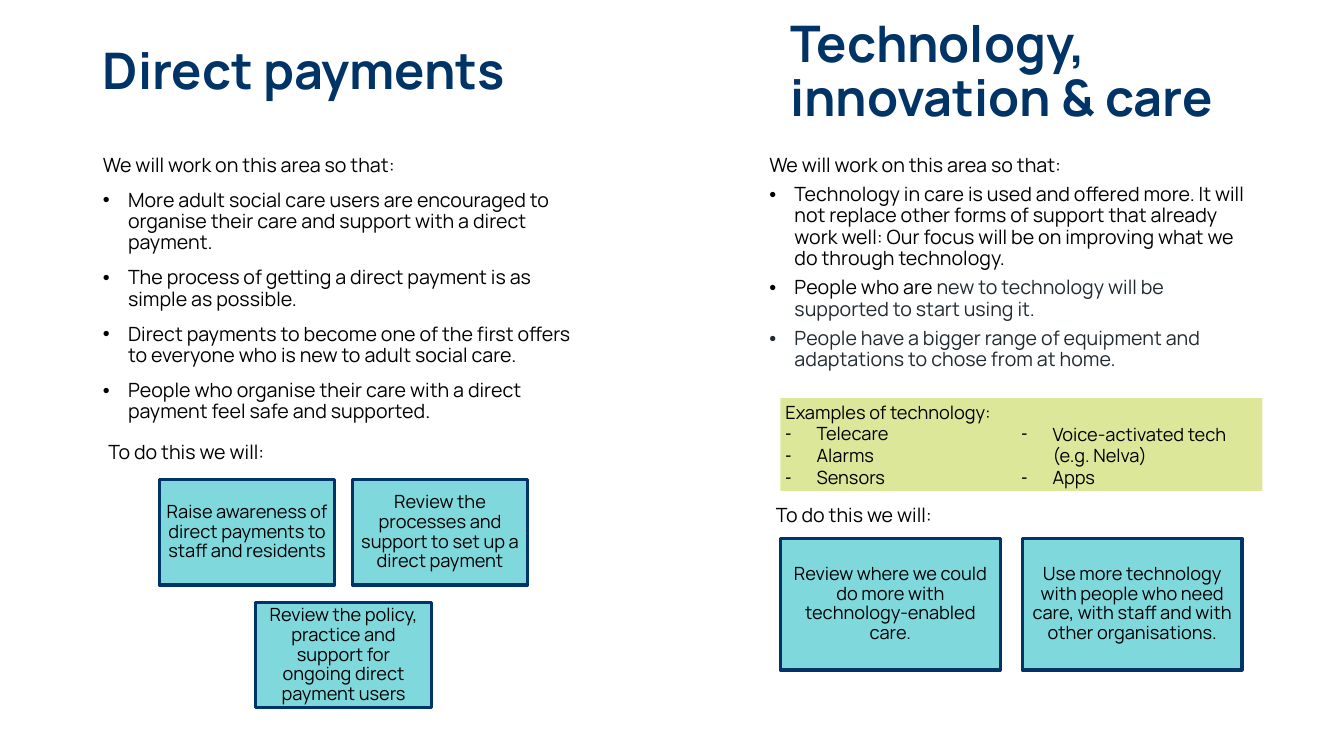
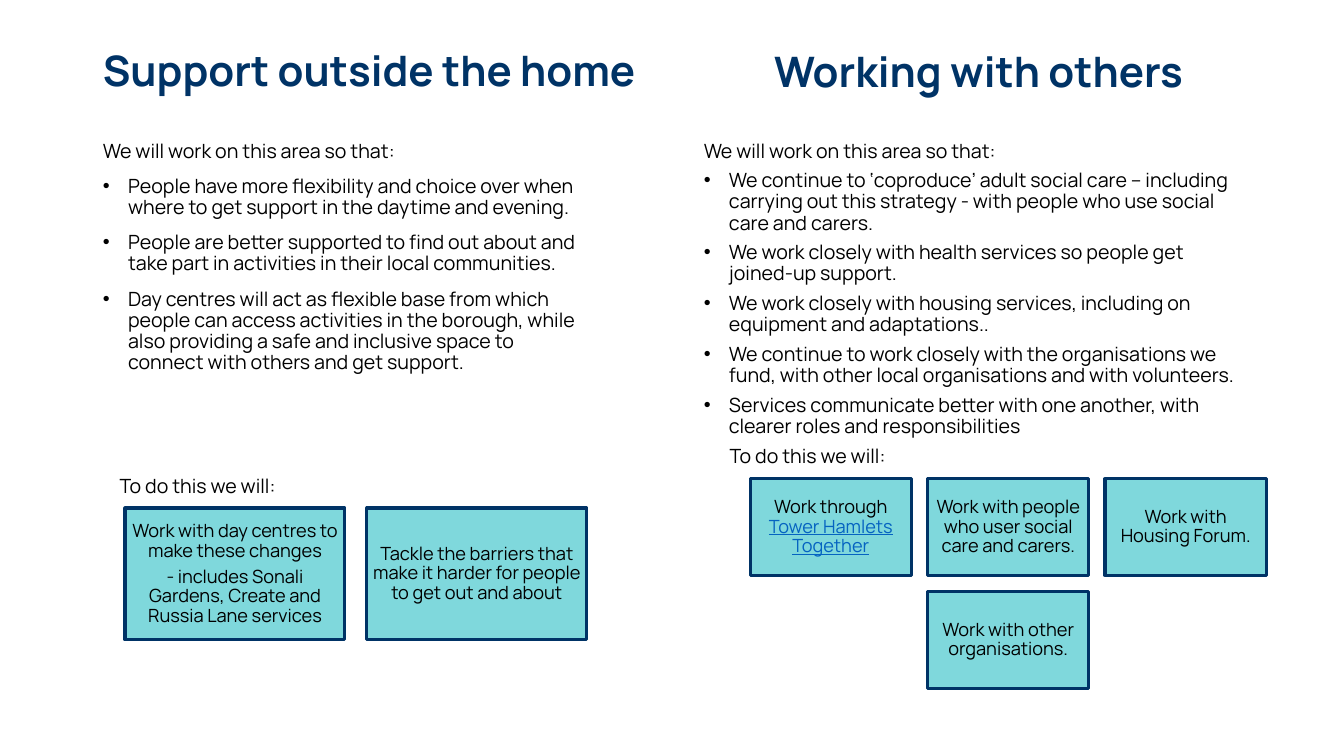
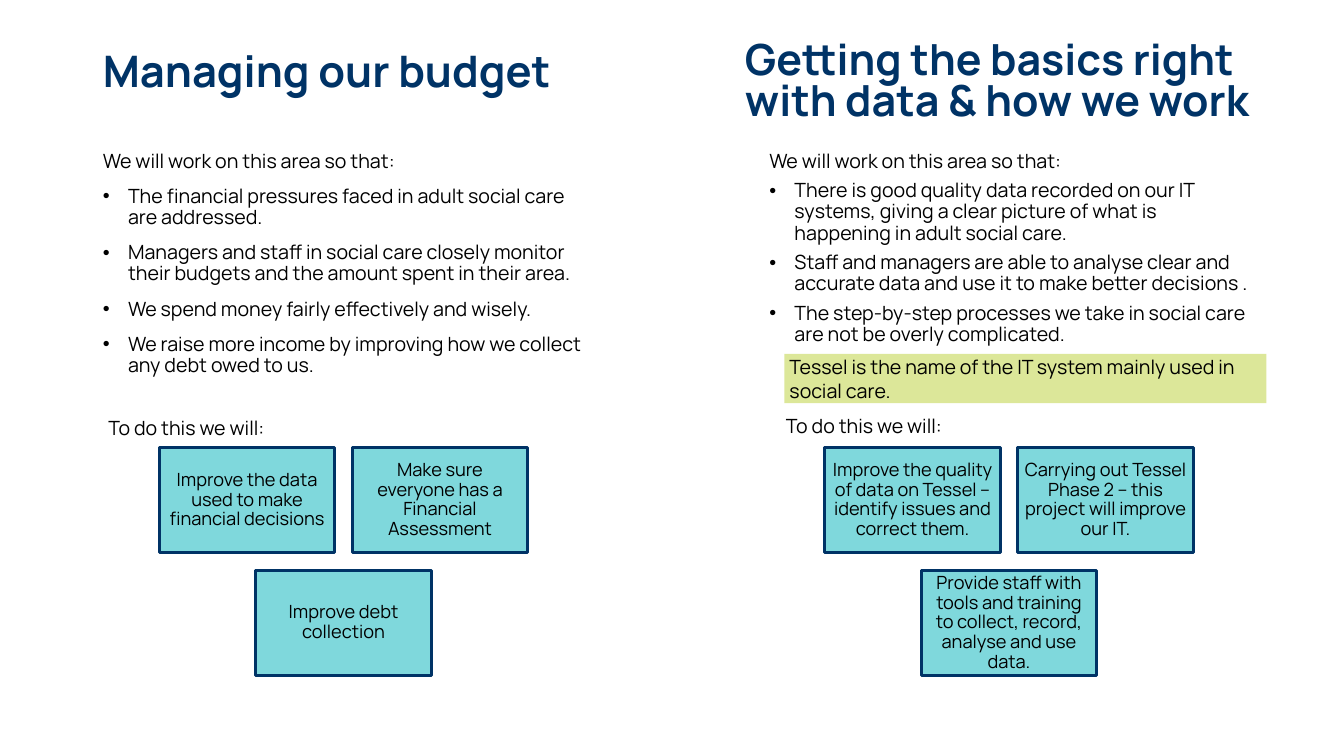
import pptx
import pptx.util
import pptx.dml.color
import pptx.enum.shapes
import pptx.enum.text
from dataclasses import dataclass
from lxml import etree
from pptx.util import Inches, Pt

ALIGN = pptx.enum.text.PP_ALIGN
ANCHOR = pptx.enum.text.MSO_ANCHOR
RECTANGLE = pptx.enum.shapes.MSO_SHAPE.RECTANGLE
DRAWING_NS = "http://schemas.openxmlformats.org/drawingml/2006/main"


@dataclass(frozen=True)
class Theme:
    font: str = "Manrope"
    navy: str = "003366"
    teal: str = "00B2BB"
    lime: str = "BBD034"
    black: str = "000000"
    slate: str = "202A30"
    link: str = "0563C1"
    body_size: float = 14
    box_size: float = 13
    border: float = 2.25
    inset: float = 0.05
    tight: float = 0.9


THEME = Theme()
INTRO = "We will work on this area so that:"
TO_DO = "To do this we will:"


def add_child(parent, tag, **attributes):
    return etree.SubElement(parent, f"{{{DRAWING_NS}}}{tag}", attributes)


def rgb(value):
    return pptx.dml.color.RGBColor.from_string(value)


class Deck:
    """Holds the theme and the slide being filled."""

    def __init__(self, theme):
        self.theme = theme
        self.show = pptx.Presentation()
        self.show.slide_width, self.show.slide_height = Inches(13.33), Inches(7.5)
        self.slide = None

    def new_slide(self):
        self.slide = self.show.slides.add_slide(self.show.slide_layouts[3])

    # Text
    def frame(self, shape, anchor=ANCHOR.TOP, inset=None):
        settings = {"word_wrap": True, "vertical_anchor": anchor,
                    "auto_size": pptx.enum.text.MSO_AUTO_SIZE.NONE}
        if inset is not None:
            for side in ("left", "right", "top", "bottom"):
                settings[f"margin_{side}"] = Inches(inset)
        for name, value in settings.items():
            setattr(shape.text_frame, name, value)
        return shape.text_frame

    def add_text(self, frame, paragraphs, size, gap=0, bullet=None, indent=0.25,
                 plain_first=False, bold=False, color=None, **layout):
        """A paragraph is a string or a list of (text, color, underline) runs."""
        for index, content in enumerate(paragraphs):
            paragraph = frame.add_paragraph() if index else frame.paragraphs[0]
            self.mark(paragraph, None if plain_first and not index else bullet, indent)
            spacing = {"space_before": Pt(gap if index else 0), "space_after": Pt(0)}
            for name, value in {**spacing, **layout}.items():
                setattr(paragraph, name, value)
            if isinstance(content, str):
                content = [(content, color or self.theme.black, None)]
            for text, run_color, underline in content:
                run = paragraph.add_run()
                run.text = text
                look = {"name": self.theme.font, "size": Pt(size),
                        "bold": bold, "underline": underline}
                for name, value in look.items():
                    setattr(run.font, name, value)
                run.font.color.rgb = rgb(run_color)

    def mark(self, paragraph, bullet, indent):
        properties = paragraph._p.get_or_add_pPr()
        margin = Inches(indent) if bullet else 0
        properties.set("marL", str(margin))
        properties.set("indent", str(-margin))
        if bullet:
            add_child(properties, "buFont", typeface="Arial")
            add_child(properties, "buChar", char=bullet)
        else:
            add_child(properties, "buNone")

    def place(self, shape, left, top, width, height):
        for name, value in zip(("left", "top", "width", "height"),
                               (left, top, width, height)):
            setattr(shape, name, Inches(value))
        return shape

    def text_box(self, *area):
        return self.slide.shapes.add_textbox(*map(Inches, area))

    # Headings and lists
    def heading(self, text, area, size, main=False, line_spacing=None):
        if main:
            shape = self.place(self.slide.shapes.title, *area)
        else:
            shape = self.text_box(*area)
        self.add_text(self.frame(shape, ANCHOR.MIDDLE), [text], size, bold=True,
                      color=self.theme.navy, alignment=ALIGN.LEFT,
                      line_spacing=line_spacing or self.theme.tight)

    def aims(self, slot, area, gap, items):
        shape = self.place(self.slide.placeholders[slot], *area)
        self.add_text(self.frame(shape), [INTRO, *items], self.theme.body_size,
                      gap=gap, bullet="•", plain_first=True, alignment=ALIGN.LEFT,
                      line_spacing=self.theme.tight)

    def to_do(self, left, top):
        shape = self.text_box(left, top, 2.08, 0.34)
        self.add_text(self.frame(shape), [TO_DO], self.theme.body_size,
                      alignment=ALIGN.CENTER)

    # Boxes
    def box(self, fill, *area):
        shape = self.slide.shapes.add_shape(RECTANGLE, *map(Inches, area))
        shape.shadow.inherit = False
        shape.fill.solid()
        shape.fill.fore_color.rgb = rgb(fill)
        add_child(shape._element.spPr.find(f".//{{{DRAWING_NS}}}srgbClr"),
                  "alpha", val="50000")
        shape.line.fill.background()
        return shape

    def note(self, area, paragraphs, size, **layout):
        frame = self.frame(self.box(self.theme.lime, *area), ANCHOR.MIDDLE,
                           self.theme.inset)
        self.add_text(frame, paragraphs, size, alignment=ALIGN.LEFT, **layout)

    def note_column(self, area, items):
        frame = self.frame(self.text_box(*area), ANCHOR.MIDDLE, self.theme.inset)
        self.add_text(frame, items, self.theme.box_size, bullet="-", indent=0.31)

    def actions(self, left, top, width, columns, items):
        """Rows of boxes; a short last row is centred."""
        height, gap = 0.6 * width, 0.1 * width
        for index, content in enumerate(items):
            row, column = divmod(index, columns)
            in_row = min(columns, len(items) - row * columns)
            shift = column + (columns - in_row) / 2
            shape = self.box(self.theme.teal, left + shift * (width + gap),
                             top + row * (height + gap), width, height)
            shape.line.color.rgb = rgb(self.theme.navy)
            shape.line.width = Pt(self.theme.border)
            paragraphs = content if isinstance(content, list) else [content]
            self.add_text(self.frame(shape, ANCHOR.MIDDLE, self.theme.inset),
                          paragraphs, self.theme.box_size, gap=4.5,
                          alignment=ALIGN.CENTER, line_spacing=self.theme.tight)


def payments_and_technology(deck):
    deck.new_slide()
    # Direct payments
    deck.heading("Direct payments", (0.92, 0, 5.47, 1.45), 36, main=True)
    deck.aims(1, (0.92, 1.49, 4.99, 5.31), 10, [
        "More adult social care users are encouraged to organise their care and support with a direct payment.",
        "The process of getting a direct payment is as simple as possible.",
        "Direct payments to become one of the first offers to everyone who is new to adult social care.",
        "People who organise their care with a direct payment feel safe and supported.",
    ])
    deck.to_do(0.81, 4.32)
    deck.actions(1.58, 4.76, 1.74, 2, [
        "Raise awareness of direct payments to staff and residents",
        "Review the processes and support to set up a direct payment",
        "Review the policy, practice and support for ongoing direct payment users",
    ])
    # Technology
    deck.heading("Technology, innovation & care", (7.74, 0, 5.22, 1.45), 36)
    deck.aims(2, (7.53, 1.49, 4.99, 5.31), 6, [
        "Technology in care is used and offered more. It will not replace other forms of support that "
        "already work well: Our focus will be on improving what we do through technology.",
        [("People who are ", THEME.black, None),
         ("new to technology will be supported to start using it.", THEME.slate, None)],
        [("People have a bigger range of equipment and adaptations to chose from at home.",
          THEME.slate, None)],
    ])
    deck.note((7.74, 3.95, 4.78, 0.92),
              ["Examples of technology:", "Telecare", "Alarms", "Sensors"],
              THEME.box_size, bullet="-", indent=0.31, plain_first=True)
    deck.note_column((10.08, 4.17, 2.44, 0.7),
                     ["Voice-activated tech (e.g. Nelva)", "Apps"])
    deck.to_do(7.43, 4.94)
    deck.actions(7.74, 5.34, 2.18, 2, [
        "Review where we could do more with technology-enabled care.",
        "Use more technology with people who need care, with staff and with other organisations.",
    ])


def support_and_partners(deck):
    deck.new_slide()
    # Support outside the home
    deck.heading("Support outside the home", (0.92, 0, 5.54, 1.45), 30, main=True)
    deck.aims(1, (0.92, 1.35, 4.99, 2.79), 10, [
        "People have more flexibility and choice over when where to get support in the daytime and evening.",
        "People are better supported to find out about and take part in activities in their local communities.",
        "Day centres will act as flexible base from which people can access activities in the borough, while "
        "also providing a safe and inclusive space to connect with others and get support.",
    ])
    deck.to_do(0.92, 4.65)
    deck.actions(1.24, 5.04, 2.18, 2, [
        ["Work with day centres to make these changes",
         "- includes Sonali Gardens, Create and Russia Lane services"],
        "Tackle the barriers that make it harder for people to get out and about",
    ])
    # Working with others
    deck.heading("Working with others", (7.58, 0.01, 5.35, 1.45), 30)
    deck.aims(2, (6.88, 1.35, 5.64, 3.22), 6, [
        "We continue to ‘coproduce’ adult social care – including carrying out this strategy - with people "
        "who use social care and carers.",
        "We work closely with health services so people get joined-up support.",
        "We work closely with housing services, including on equipment and adaptations..",
        "We continue to work closely with the organisations we fund, with other local organisations and "
        "with volunteers.",
        "Services communicate better with one another, with clearer roles and responsibilities",
    ])
    deck.to_do(6.97, 4.36)
    deck.actions(7.44, 4.75, 1.6, 3, [
        [[("Work through ", THEME.black, None),
          ("Tower Hamlets Together", THEME.link, True)]],
        "Work with people who user social care and carers.",
        "Work with Housing Forum.",
        "Work with other organisations.",
    ])


def budget_and_basics(deck):
    deck.new_slide()
    # Budget
    deck.heading("Managing our budget", (0.92, 0, 5.47, 1.45), 31, main=True)
    deck.aims(1, (0.92, 1.45, 4.99, 2.6), 10, [
        "The financial pressures faced in adult social care are addressed.",
        "Managers and staff in social care closely monitor their budgets and the amount spent in their area.",
        "We spend money fairly effectively and wisely.",
        "We raise more income by improving how we collect any debt owed to us.",
    ])
    deck.to_do(0.81, 4.08)
    deck.actions(1.58, 4.44, 1.74, 2, [
        "Improve the data used to make financial decisions",
        "Make sure everyone has a Financial Assessment",
        "Improve debt collection",
    ])
    # Data and ways of working
    deck.heading("Getting the basics right with data & how we work",
                 (7.29, 0.21, 5.63, 1.24), 30.6, line_spacing=0.8)
    deck.aims(2, (7.53, 1.45, 4.99, 5.31), 6, [
        "There is good quality data recorded on our IT systems, giving a clear picture of what is happening "
        "in adult social care.",
        "Staff and managers are able to analyse clear and accurate data and use it to make better decisions .",
        "The step-by-step processes we take in social care are not be overly complicated.",
    ])
    deck.note((7.78, 3.51, 4.78, 0.49),
              ["Tessel is the name of the IT system mainly used in social care."],
              THEME.body_size)
    deck.to_do(7.53, 4.06)
    deck.actions(8.18, 4.44, 1.74, 2, [
        "Improve the quality of data on Tessel – identify issues and correct them.",
        "Carrying out Tessel Phase 2 – this project will improve our IT.",
        "Provide staff with tools and training to collect, record, analyse and use data.",
    ])


def main():
    deck = Deck(THEME)
    for build in (payments_and_technology, support_and_partners, budget_and_basics):
        build(deck)
    deck.show.save("out.pptx")


if __name__ == "__main__":
    main()
